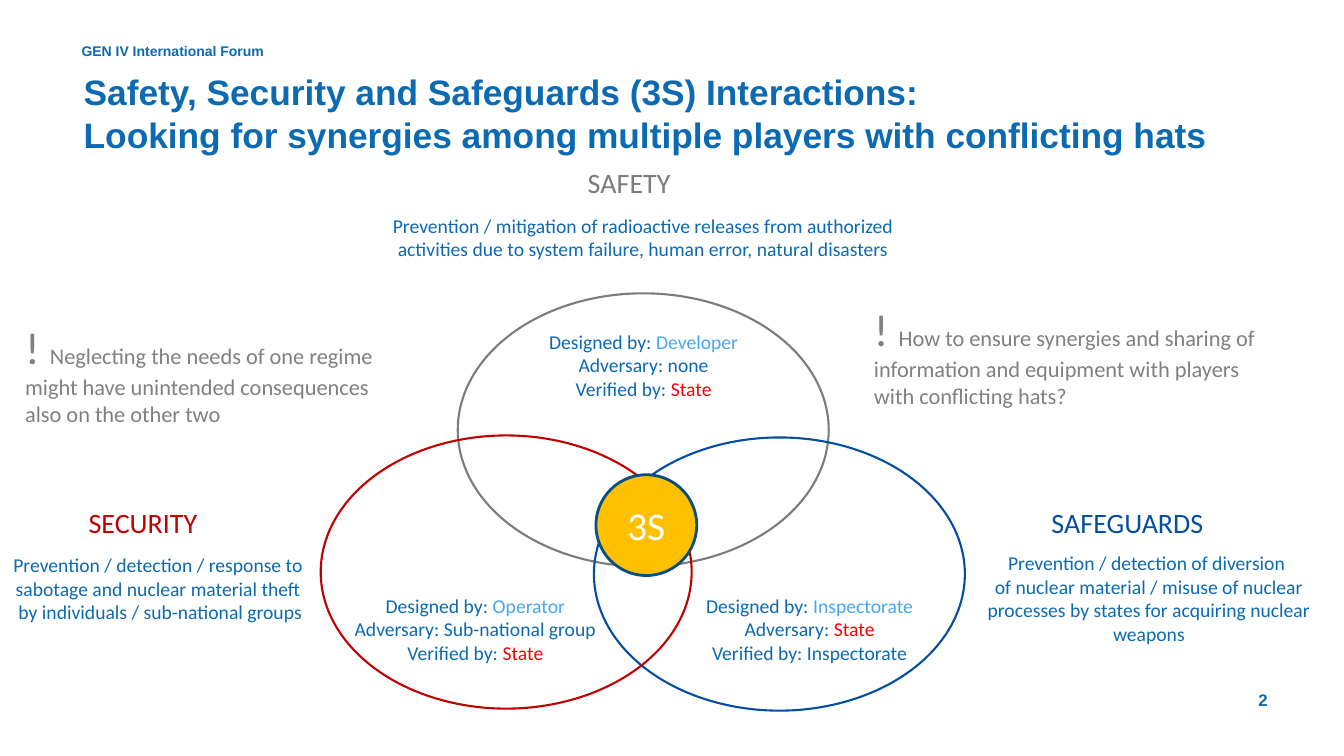
from dataclasses import dataclass

import pptx
import pptx.dml.color
import pptx.enum.shapes
import pptx.enum.text
import pptx.util

RGB = pptx.dml.color.RGBColor
Align = pptx.enum.text.PP_ALIGN
Anchor = pptx.enum.text.MSO_ANCHOR

BLUE = RGB(0x0C, 0x6A, 0xB2)
LIGHT_BLUE = RGB(0x49, 0xA6, 0xF0)
NAVY = RGB(0x03, 0x4E, 0xA2)
DARK_BLUE = RGB(0x09, 0x4E, 0x83)
DARK_RED = RGB(0xC0, 0x00, 0x00)
RED = RGB(0xFF, 0x00, 0x00)
GREY = RGB(0x7C, 0x7C, 0x7C)
MID_GREY = RGB(0x80, 0x80, 0x80)
GOLD = RGB(0xFF, 0xC0, 0x00)
WHITE = RGB(0xFF, 0xFF, 0xFF)

SLIDE_WIDTH = pptx.util.Inches(13.33)
SLIDE_HEIGHT = pptx.util.Inches(7.5)


@dataclass(frozen=True)
class Area:
    """Left, top, width and height as percentages of the slide."""
    left: float
    top: float
    width: float
    height: float

    def emu(self) -> tuple[int, int, int, int]:
        return (round(SLIDE_WIDTH * self.left / 100), round(SLIDE_HEIGHT * self.top / 100),
                round(SLIDE_WIDTH * self.width / 100), round(SLIDE_HEIGHT * self.height / 100))


@dataclass(frozen=True)
class Run:
    text: str
    color: RGB = BLUE
    size: float = 14
    font: str = "Calibri"
    bold: bool = False
    on_new_line: bool = False


Lines = list[list[Run]]


@dataclass(frozen=True)
class Regime:
    name: str
    color: RGB
    name_area: Area
    aim: list[str]
    aim_area: Area
    ring_corner: tuple[float, float]
    roles: Lines
    roles_area: Area


@dataclass(frozen=True)
class Remark:
    lines: list[str]
    corner: tuple[float, float]


RING_SIZE = (27.6, 36.13)
REMARK_SIZE = (30.3, 15.73)

# Regimes, in drawing order of their rings
REGIMES = [
    Regime("SAFETY", GREY, Area(42.99, 21.2, 9.75, 5.87),
           ["Prevention / mitigation of radioactive releases from authorized "
            "activities due to system failure, human error, natural disasters"],
           Area(27, 27.6, 41.7, 7.6), (34.06, 38.8),
           [[Run("Designed by: "), Run("Developer", LIGHT_BLUE)],
            [Run("Adversary: none")],
            [Run("Verified by: "), Run("State", RED)]],
           Area(39.3, 42.93, 17.18, 10.8)),
    Regime("SAFEGUARDS", NAVY, Area(77.5, 66.27, 16.05, 5.87),
           ["Prevention / detection of diversion ",
            "of nuclear material / misuse of nuclear processes by states "
            "for acquiring nuclear weapons"],
           Area(70.67, 72.27, 29.63, 13.87), (44.19, 57.87),
           [[Run("Designed by: "), Run("Inspectorate", LIGHT_BLUE)],
            [Run("Adversary: "), Run("State", RED)],
            [Run("Verified by: Inspectorate")]],
           Area(50.94, 77.87, 18.6, 10.8)),
    Regime("SECURITY", DARK_RED, Area(5.85, 66.27, 12.15, 5.87),
           ["Prevention / detection / response to ",
            "sabotage and nuclear material theft ",
            "by individuals / sub-national groups"],
           Area(-0.45, 72.53, 24.76, 10.8), (23.86, 57.6),
           [[Run("Designed by: "), Run("Operator", LIGHT_BLUE)],
            [Run("Adversary: Sub-national group")],
            [Run("Verified by: "), Run("State", RED)]],
           Area(24.68, 77.87, 21.38, 10.8)),
]

REMARKS = [
    Remark(["Neglecting the needs of one regime",
            "might have unintended consequences",
            "also on the other two"], (1.13, 41.6)),
    Remark(["How to ensure synergies and sharing of information and equipment "
            "with players with conflicting hats?"], (64.29, 39.2)),
]


def write(frame, lines: Lines, align: Align = Align.LEFT, **frame_format) -> None:
    for attribute, value in frame_format.items():
        setattr(frame, attribute, value)
    for index, line in enumerate(lines):
        paragraph = frame.paragraphs[0] if index == 0 else frame.add_paragraph()
        paragraph.alignment = align
        for item in line:
            if item.on_new_line:
                paragraph.add_line_break()
            run = paragraph.add_run()
            run.text = item.text
            run.font.color.rgb = item.color
            font_format = {"name": item.font, "size": pptx.util.Pt(item.size), "bold": item.bold}
            for attribute, value in font_format.items():
                setattr(run.font, attribute, value)


def add_text(slide, area: Area, lines: Lines, align: Align = Align.LEFT,
             wrap: bool = True, anchor: Anchor = Anchor.TOP) -> None:
    box = slide.shapes.add_textbox(*area.emu())
    write(box.text_frame, lines, align, word_wrap=wrap, vertical_anchor=anchor)


def add_ellipse(slide, area: Area, line_color: RGB, line_width: float):
    ellipse = slide.shapes.add_shape(pptx.enum.shapes.MSO_SHAPE.OVAL, *area.emu())
    ellipse.shadow.inherit = False
    ellipse.fill.background()
    ellipse.line.color.rgb = line_color
    ellipse.line.width = pptx.util.Pt(line_width)
    return ellipse


def add_title(slide) -> None:
    title = slide.shapes.title
    title.left, title.top, title.width, title.height = Area(6.23, 8.67, 88.82, 12).emu()
    heading = [Run("Safety, Security and Safeguards (3S) Interactions:", BLUE, 25.2, "Arial", True),
               Run("Looking for synergies among multiple players with conflicting hats",
                   BLUE, 25.2, "Arial", True, on_new_line=True)]
    write(title.text_frame, [heading], margin_left=0, word_wrap=True,
          vertical_anchor=Anchor.TOP, auto_size=pptx.enum.text.MSO_AUTO_SIZE.NONE)


def add_regime(slide, regime: Regime) -> None:
    add_ellipse(slide, Area(*regime.ring_corner, *RING_SIZE), regime.color, 1.5)
    add_text(slide, regime.name_area, [[Run(regime.name, regime.color, 20)]], wrap=False)
    add_text(slide, regime.aim_area, [[Run(text)] for text in regime.aim], Align.CENTER)
    add_text(slide, regime.roles_area, regime.roles, Align.CENTER, wrap=False)


def add_remark(slide, remark: Remark) -> None:
    lines = [[Run(text, MID_GREY, 16)] for text in remark.lines]
    lines[0].insert(0, Run("! ", MID_GREY, 32))
    add_text(slide, Area(*remark.corner, *REMARK_SIZE), lines)


def main() -> None:
    deck = pptx.Presentation()
    deck.slide_width, deck.slide_height = SLIDE_WIDTH, SLIDE_HEIGHT
    slide = deck.slides.add_slide(deck.slide_layouts.get_by_name("Title Only"))

    # Header, title and page number
    add_text(slide, Area(5.33, 4.93, 26.03, 3.6),
             [[Run("GEN IV International Forum", BLUE, 10, "Arial", True)]])
    add_title(slide)
    add_text(slide, Area(91.52, 89.87, 3.53, 5.33), [[Run("2", BLUE, 12, "Arial", True)]],
             Align.RIGHT, anchor=Anchor.MIDDLE)

    # Three overlapping regimes and the side remarks
    for regime in REGIMES:
        add_regime(slide, regime)
    for remark in REMARKS:
        add_remark(slide, remark)

    # Common core
    core = add_ellipse(slide, Area(44.34, 62.8, 7.5, 13.33), DARK_BLUE, 2)
    core.fill.solid()
    core.fill.fore_color.rgb = GOLD
    write(core.text_frame, [[Run("3S", WHITE, 28)]], Align.CENTER, vertical_anchor=Anchor.MIDDLE)

    deck.save("out.pptx")


if __name__ == "__main__":
    main()
